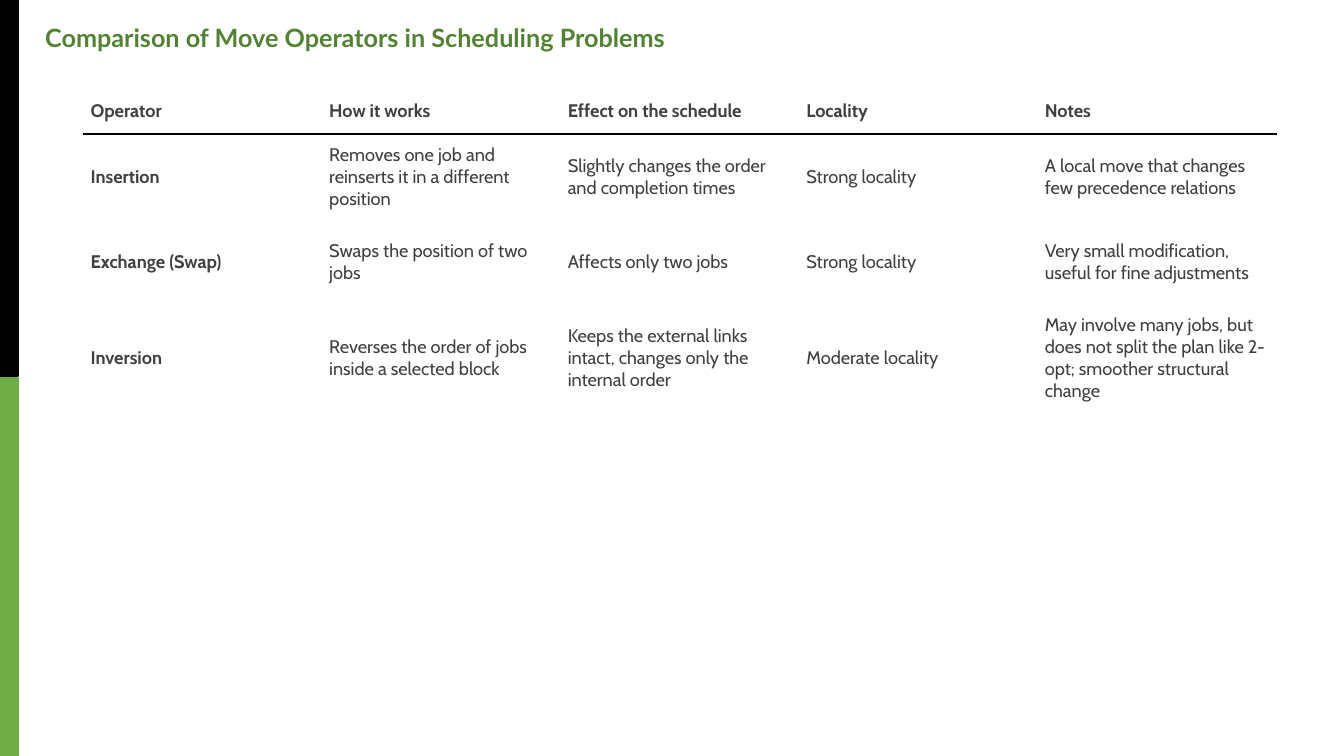
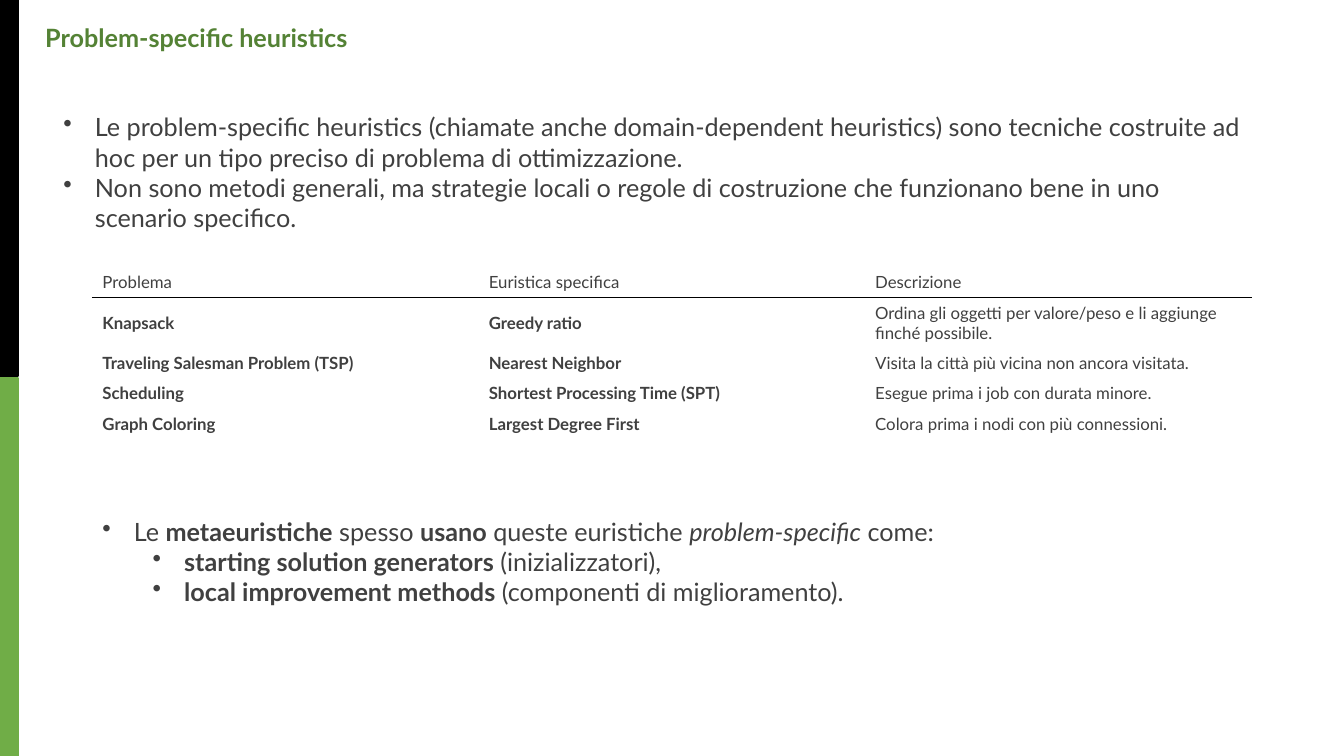
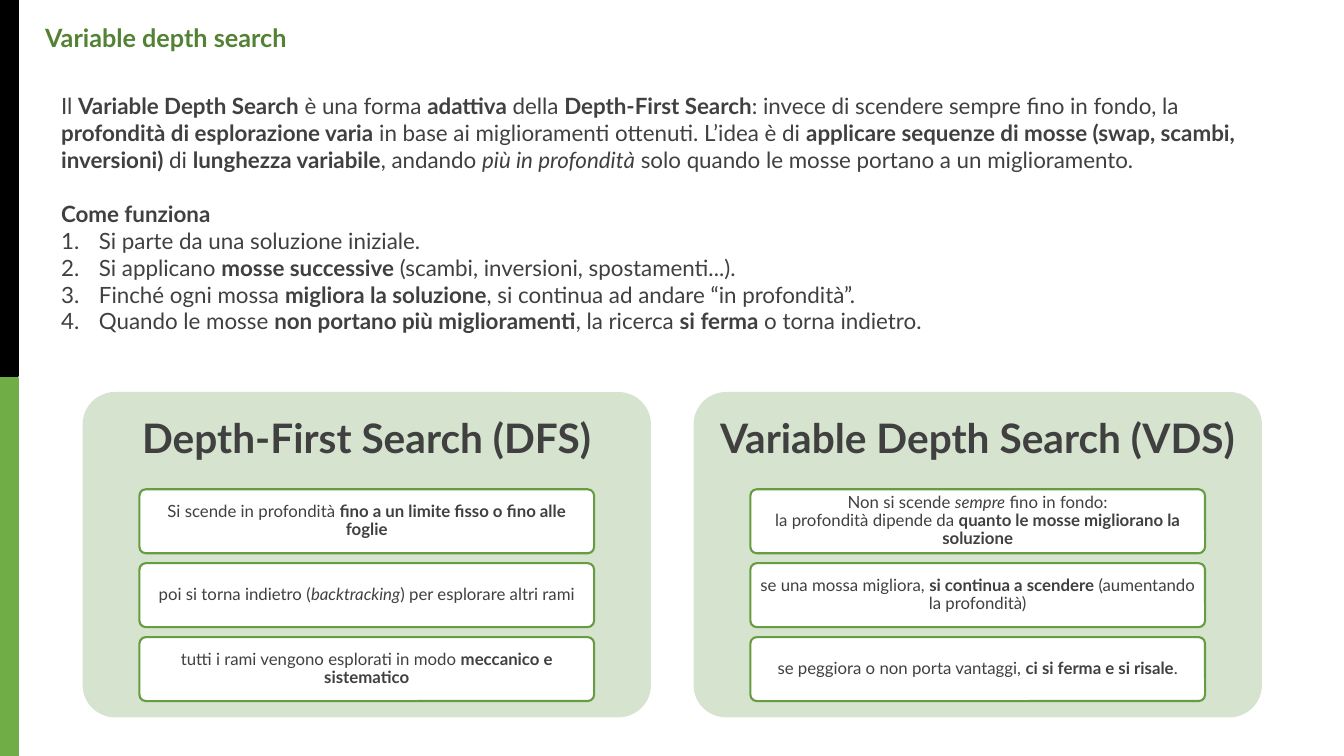
from dataclasses import dataclass

from lxml import etree
from pptx import Presentation
from pptx.dml.color import RGBColor
from pptx.enum import shapes, text
from pptx.oxml.ns import qn
from pptx.util import Pt


@dataclass(frozen=True)
class Theme:
    green: str = "70AD47"
    title: str = "548235"
    black: str = "000000"
    white: str = "FFFFFF"
    ink: str = "404040"
    card: str = "D5E3CF"
    outline: str = "669D40"
    font: str = "Lato"
    table_font: str = "Cabin"
    title_size: float = 18
    bullet_size: float = 18
    body_size: float = 16
    wide_table_size: float = 13
    small_size: float = 12
    card_title_size: float = 29


THEME = Theme()
BULLET = ("buChar", {"char": "•"})
NUMBER = ("buAutoNum", {"type": "arabicPeriod"})


def split_runs(content):
    for bold_index, part in enumerate(content.split("**")):
        for italic_index, piece in enumerate(part.split("*")):
            if piece:
                yield piece, bold_index % 2 == 1, italic_index % 2 == 1


def add_text(frame, content, *, size, color=THEME.ink, font=THEME.font, bold=False,
             align=text.PP_ALIGN.LEFT, line_spacing=None, before=0,
             marker=None, left=0, hanging=0, level=0):
    first = frame.paragraphs[0]
    paragraph = frame.add_paragraph() if first.runs else first
    paragraph.alignment = align
    paragraph.level = level
    paragraph.space_before = Pt(before)
    if line_spacing:
        paragraph.line_spacing = line_spacing
    if marker:
        name, attributes = marker
        properties = paragraph._p.get_or_add_pPr()
        properties.set("marL", str(Pt(left)))
        properties.set("indent", str(-Pt(hanging)))
        etree.SubElement(properties, qn(f"a:{name}"), attributes)
    for piece, strong, italic in split_runs(content):
        for index, line in enumerate(piece.split("\n")):
            if index:
                paragraph.add_line_break()
            run = paragraph.add_run()
            run.text = line
            run.font.size = Pt(size)
            run.font.name = font
            run.font.bold = bold or strong
            run.font.italic = italic
            run.font.color.rgb = RGBColor.from_string(color)


def set_insets(target, horizontal, vertical):
    target.margin_left = target.margin_right = Pt(horizontal)
    target.margin_top = target.margin_bottom = Pt(vertical)


def add_box(slide, box):
    frame = slide.shapes.add_textbox(*map(Pt, box)).text_frame
    frame.word_wrap = True
    return frame


def add_panel(slide, kind, box, fill, line=None):
    shape = slide.shapes.add_shape(kind, *map(Pt, box))
    shape.shadow.inherit = False
    shape.fill.solid()
    shape.fill.fore_color.rgb = RGBColor.from_string(fill)
    if line:
        shape.line.color.rgb = RGBColor.from_string(line)
        shape.line.width = Pt(1.5)
    else:
        shape.line.fill.background()
    return shape


def add_rounded(slide, box, fill, line=None):
    shape = add_panel(slide, shapes.MSO_SHAPE.ROUNDED_RECTANGLE, box, fill, line)
    shape.adjustments[0] = 0.1
    return shape


def add_slide(presentation, title):
    slide = presentation.slides.add_slide(presentation.slide_layouts[6])
    for top, height, color in ((270, 270, THEME.green), (0, 268.6, THEME.black)):
        add_panel(slide, shapes.MSO_SHAPE.RECTANGLE, (0, top, 13, height), color, color)
    add_text(add_box(slide, (25.2, 12.2, 623.5, 28.8)), title,
             size=THEME.title_size, color=THEME.title, bold=True)
    return slide


def set_border(cell, side):
    border = etree.Element(qn(f"a:{side}"), w=str(Pt(1)))
    fill = etree.SubElement(border, qn("a:solidFill"))
    etree.SubElement(fill, qn("a:srgbClr"), val=THEME.black)
    cell._tc.get_or_add_tcPr().insert(0, border)


def add_table(slide, box, rows, heights, *, size, font=THEME.font, insets=(7.2, 3.6)):
    left, top, width = box
    columns = len(rows[0])
    table = slide.shapes.add_table(len(rows), columns, Pt(left), Pt(top),
                                   Pt(width), Pt(sum(heights))).table
    table.first_row = table.horz_banding = False
    for column in table.columns:
        column.width = Pt(width / columns)
    for row_index, (row, height) in enumerate(zip(rows, heights)):
        table.rows[row_index].height = Pt(height)
        for column_index, content in enumerate(row):
            cell = table.cell(row_index, column_index)
            cell.fill.background()
            cell.vertical_anchor = text.MSO_ANCHOR.MIDDLE
            set_insets(cell, *insets)
            add_text(cell.text_frame, content, size=size, font=font)
            if row_index < 2:
                set_border(cell, "lnT" if row_index else "lnB")


def add_bullets(slide, box, items):
    frame = add_box(slide, box)
    for level, content in items:
        add_text(frame, content, size=THEME.bullet_size, marker=BULLET,
                 left=22.5 + 36 * level, hanging=22.5, level=level)


def add_card(slide, box, title, statements):
    left, top, width, height = box
    add_rounded(slide, box, THEME.card)
    heading = add_box(slide, (left, top, width, height * 0.3))
    heading.vertical_anchor = text.MSO_ANCHOR.MIDDLE
    set_insets(heading, 8.6, 8.6)
    add_text(heading, title, size=THEME.card_title_size, bold=True,
             align=text.PP_ALIGN.CENTER, line_spacing=0.9)
    for index, statement in enumerate(statements):
        row_box = (left + width * 0.1, top + 69.5 + 52.8 * index, width * 0.8, 45.7)
        frame = add_rounded(slide, row_box, THEME.white, THEME.outline).text_frame
        frame.word_wrap = True
        frame.vertical_anchor = text.MSO_ANCHOR.MIDDLE
        set_insets(frame, 3.5, 3.5)
        add_text(frame, statement, size=THEME.small_size,
                 align=text.PP_ALIGN.CENTER, line_spacing=0.9)


def build_operators(presentation):
    slide = add_slide(presentation, "Comparison of Move Operators in Scheduling Problems")
    rows = [
        ("**Operator**", "**How it works**", "**Effect on the schedule**",
         "**Locality**", "**Notes**"),
        ("**Insertion**", "Removes one job and reinserts it in a different position",
         "Slightly changes the order and completion times", "Strong locality",
         "A local move that changes few precedence relations"),
        ("**Exchange (Swap)**", "Swaps the position of two jobs",
         "Affects only two jobs", "Strong locality",
         "Very small modification, useful for fine adjustments"),
        ("**Inversion**", "Reverses the order of jobs inside a selected block",
         "Keeps the external links intact, changes only the internal order",
         "Moderate locality",
         "May involve many jobs, but does not split the plan like 2-opt; "
         "smoother structural change"),
    ]
    add_table(slide, (59.5, 62.6, 852), rows, (33.1, 61.2, 61.2, 75.6),
              size=THEME.wide_table_size, font=THEME.table_font, insets=(5.3, 2.7))


def build_heuristics(presentation):
    slide = add_slide(presentation, "Problem-specific heuristics")
    rows = [
        ("Problema", "Euristica specifica", "Descrizione"),
        ("**Knapsack**", "**Greedy ratio**",
         "Ordina gli oggetti per valore/peso e li aggiunge finché possibile."),
        ("**Traveling Salesman Problem (TSP)**", "**Nearest Neighbor**",
         "Visita la città più vicina non ancora visitata."),
        ("**Scheduling**", "**Shortest Processing Time (SPT)**",
         "Esegue prima i job con durata minore."),
        ("**Graph Coloring**", "**Largest Degree First**",
         "Colora prima i nodi con più connessioni."),
    ]
    add_table(slide, (66, 190.8, 828), rows, (21.6, 36, 21.6, 21.6, 21.6),
              size=THEME.small_size)
    add_bullets(slide, (38.2, 76.3, 866, 94.3), [
        (0, "Le problem-specific heuristics (chiamate anche domain-dependent heuristics) "
            "sono tecniche costruite ad hoc per un tipo preciso di problema di ottimizzazione."),
        (0, "Non sono metodi generali, ma strategie locali o regole di costruzione "
            "che funzionano bene in uno scenario specifico."),
    ])
    add_bullets(slide, (66, 365, 839, 72.7), [
        (0, "Le **metaeuristiche** spesso **usano** queste euristiche *problem-specific* come:"),
        (1, "**starting solution generators** (inizializzatori),"),
        (1, "**local improvement methods** (componenti di miglioramento)."),
    ])


def build_depth_search(presentation):
    slide = add_slide(presentation, "Variable depth search")
    frame = add_box(slide, (36.6, 62.6, 881.3, 181.4))
    add_text(frame,
             "Il **Variable Depth Search** è una forma **adattiva** della "
             "**Depth-First Search**: invece di scendere sempre fino in fondo, la "
             "**profondità di esplorazione varia** in base ai miglioramenti ottenuti. "
             "L’idea è di **applicare sequenze di mosse (swap, scambi, inversioni)** di "
             "**lunghezza variabile**, andando *più in profondità* solo quando le mosse "
             "portano a un miglioramento.", size=THEME.body_size)
    add_text(frame, "Come funziona", size=THEME.body_size, bold=True, before=19.2)
    for step in (
        "Si parte da una soluzione iniziale.",
        "Si applicano **mosse successive** (scambi, inversioni, spostamenti...).",
        "Finché ogni mossa **migliora la soluzione**, si continua ad andare “in profondità”.",
        "Quando le mosse **non portano più miglioramenti**, la ricerca **si ferma** "
        "o torna indietro.",
    ):
        add_text(frame, step, size=THEME.body_size, marker=NUMBER, left=27, hanging=27)
    cards = [
        ("Depth-First Search (DFS)", (
            "Si scende in profondità **fino a un limite fisso o fino alle foglie**",
            "poi si torna indietro (*backtracking*) per esplorare altri rami",
            "tutti i rami vengono esplorati in modo **meccanico e sistematico**",
        )),
        ("Variable Depth Search (VDS)", (
            "Non si scende *sempre* fino in fondo:\nla profondità dipende da "
            "**quanto le mosse migliorano la soluzione**",
            "se una mossa migliora, **si continua a scendere** (aumentando la profondità)",
            "se peggiora o non porta vantaggi, **ci si ferma e si risale**.",
        )),
    ]
    for index, (title, statements) in enumerate(cards):
        add_card(slide, (59 + 436.4 * index, 280, 406, 232.4), title, statements)


def main():
    presentation = Presentation()
    presentation.slide_width, presentation.slide_height = Pt(960), Pt(540)
    build_operators(presentation)
    build_heuristics(presentation)
    build_depth_search(presentation)
    presentation.save("out.pptx")


if __name__ == "__main__":
    main()
